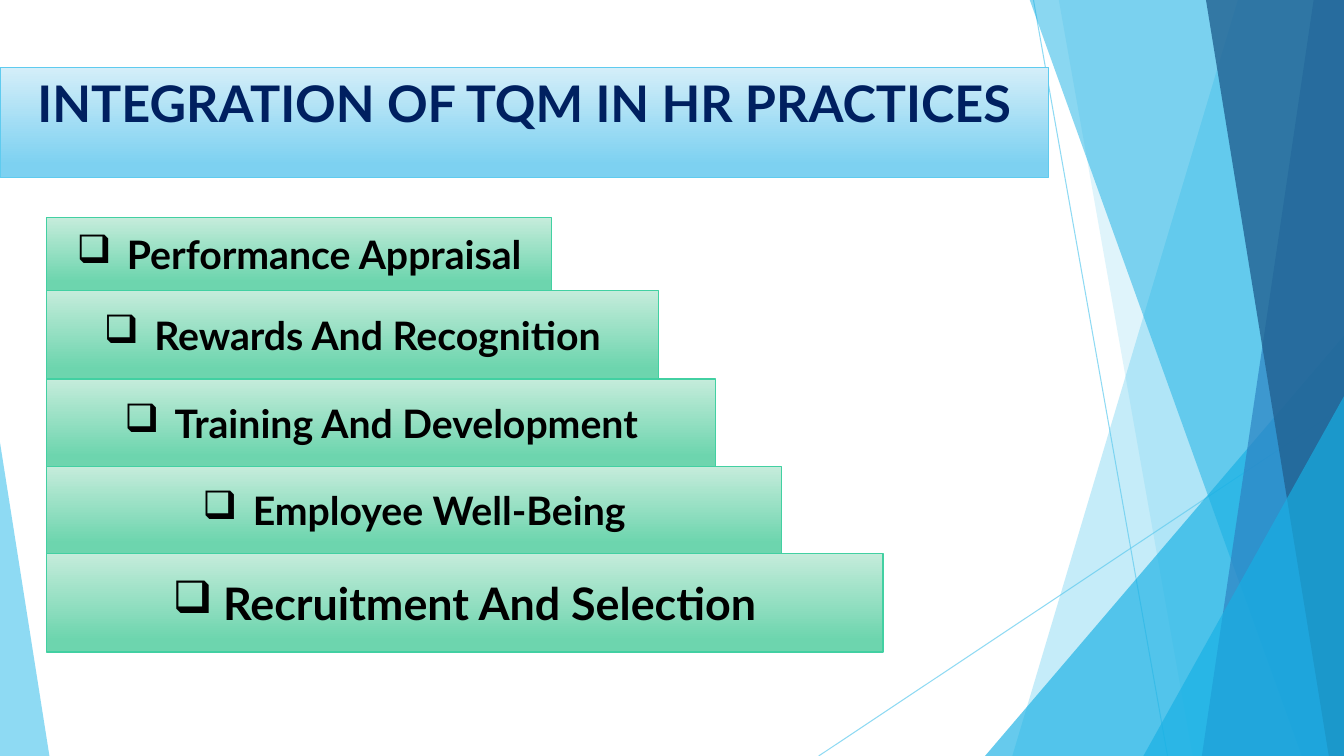
import pptx
import pptx.util
import pptx.dml.color
import pptx.enum.shapes
import pptx.enum.text
import pptx.oxml.ns
from lxml import etree

Inches, Pt = pptx.util.Inches, pptx.util.Pt
SHAPE = pptx.enum.shapes.MSO_SHAPE
qn = pptx.oxml.ns.qn

# Content
TITLE = "INTEGRATION OF TQM IN HR PRACTICES"
STEPS = [  # text, width, height, text size
    ("Performance Appraisal", 5.01, 0.72, 28),
    ("Rewards And Recognition", 6.07, 0.88, 28),
    ("Training And Development", 6.64, 0.87, 28),
    ("Employee Well-Being", 7.29, 0.86, 28),
    ("Recruitment And Selection", 8.3, 0.98, 32),
]
STEP_LEFT, STEP_TOP = 0.46, 2.16
FONT = "Lato"
COLORS = {
    "sky": "5FCBEF", "cyan": "17B0E4", "blue": "2E83C3", "deep": "226292",
    "navy": "002060", "black": "000000",
    "title_top": "D4EEF9", "title_end": "7DD1F1",
    "step_top": "C5ECDB", "step_end": "6DD5AE", "step_line": "42D0A2",
}

# Background decoration
WIDTH, HEIGHT, TOP = 13.33, 7.5, -0.01
RAYS = [((10.25, 0), (11.58, HEIGHT)), ((WIDTH, 4.03), (8.12, HEIGHT))]
FACETS = [  # "panel": top x, bottom x; "triangle": left, top, width, apex
    ("panel", (12.28, 10.04), "sky", 36),
    ("panel", (10.5, 11.83), "sky", 20),
    ("triangle", (9.77, 3.33, 3.56, 1), "cyan", 66),
    ("panel", (10.21, 12.91), "cyan", 50),
    ("panel", (13.03, 11.92), "blue", 70),
    ("panel", (11.96, 13.18), "deep", 80),
    ("triangle", (11.34, 3.93, 1.99, 1), "cyan", 66),
    ("triangle", (0, 4.39, 0.49, 0), "sky", 70),
]


def rgb(name):
    return pptx.dml.color.RGBColor.from_string(COLORS[name])


def paint(fill_owner, element, color, opacity):
    fill_owner.fill.solid()
    fill_owner.fill.fore_color.rgb = rgb(color)
    clr = next(element.iter(qn("a:srgbClr")))
    etree.SubElement(clr, qn("a:alpha"), val=str(opacity * 1000))


def add_ray(s, start, end):
    ray = s.shapes.add_connector(pptx.enum.shapes.MSO_CONNECTOR.STRAIGHT,
                                 *map(Inches, start + end))
    ray.line.width = Pt(0.75)
    paint(ray.line, ray._element.spPr, "sky", 70)
    etree.SubElement(ray._element.spPr, qn("a:effectLst"))


def add_facet(s, kind, geometry, color, opacity):
    if kind == "panel":
        top_x, bottom_x = geometry
        corners = [(WIDTH, TOP), (WIDTH, HEIGHT), (bottom_x, HEIGHT)]
        builder = s.shapes.build_freeform(Inches(top_x), Inches(TOP))
        builder.add_line_segments([(Inches(x), Inches(y)) for x, y in corners])
        sp = builder.convert_to_shape()
    else:
        left, top, width, apex = geometry
        sp = s.shapes.add_shape(SHAPE.ISOSCELES_TRIANGLE, Inches(left), Inches(top),
                                Inches(width), Inches(HEIGHT - top))
        sp.adjustments[0] = apex
    sp.shadow.inherit = False
    sp.line.fill.background()
    paint(sp, sp._element.spPr, color, opacity)


def style_box(sp, top_color, end_color, line_color):
    sp.fill.gradient()
    sp.fill.gradient_angle = 270
    stops = zip(sp.fill.gradient_stops, (0, 0.88), (top_color, end_color))
    for stop, position, color in stops:
        stop.position = position
        stop.color.rgb = rgb(color)
    sp.line.color.rgb = rgb(line_color)
    sp.line.width = Pt(1)


def write(sp, text, size, color, anchor):
    tf = sp.text_frame
    tf.text = text
    tf.word_wrap = True
    tf.auto_size = pptx.enum.text.MSO_AUTO_SIZE.NONE
    tf.vertical_anchor = anchor
    p = tf.paragraphs[0]
    p.alignment = pptx.enum.text.PP_ALIGN.CENTER
    p.font.name, p.font.size, p.font.bold = FONT, Pt(size), True
    p.font.color.rgb = rgb(color)
    return p


def add_bullet(p):
    pPr = p._p.get_or_add_pPr()
    pPr.set("marL", str(Inches(0.5)))
    pPr.set("indent", str(-Inches(0.5)))
    bullet = etree.Element(qn("a:buChar"), char="❑")
    pPr.insert(0, bullet)


def main():
    prs = pptx.Presentation()
    prs.slide_width, prs.slide_height = Inches(WIDTH), Inches(HEIGHT)
    s = prs.slides.add_slide(prs.slide_layouts[5])
    anchors = pptx.enum.text.MSO_ANCHOR

    for start, end in RAYS:
        add_ray(s, start, end)
    for facet in FACETS:
        add_facet(s, *facet)

    # Title, brought in front of the decoration
    title = s.shapes.title
    title.left, title.top = Inches(0), Inches(0.67)
    title.width, title.height = Inches(10.4), Inches(1.09)
    style_box(title, "title_top", "title_end", "sky")
    write(title, TITLE, 36, "navy", anchors.TOP)
    s.shapes._spTree.append(title._element)

    # Staircase of steps, each resting on the next
    top = STEP_TOP
    for text, width, height, size in STEPS:
        step = s.shapes.add_shape(SHAPE.RECTANGLE, Inches(STEP_LEFT), Inches(top),
                                  Inches(width), Inches(height))
        step.shadow.inherit = False
        style_box(step, "step_top", "step_end", "step_line")
        add_bullet(write(step, text, size, "black", anchors.MIDDLE))
        top += height

    prs.save("out.pptx")


if __name__ == "__main__":
    main()
